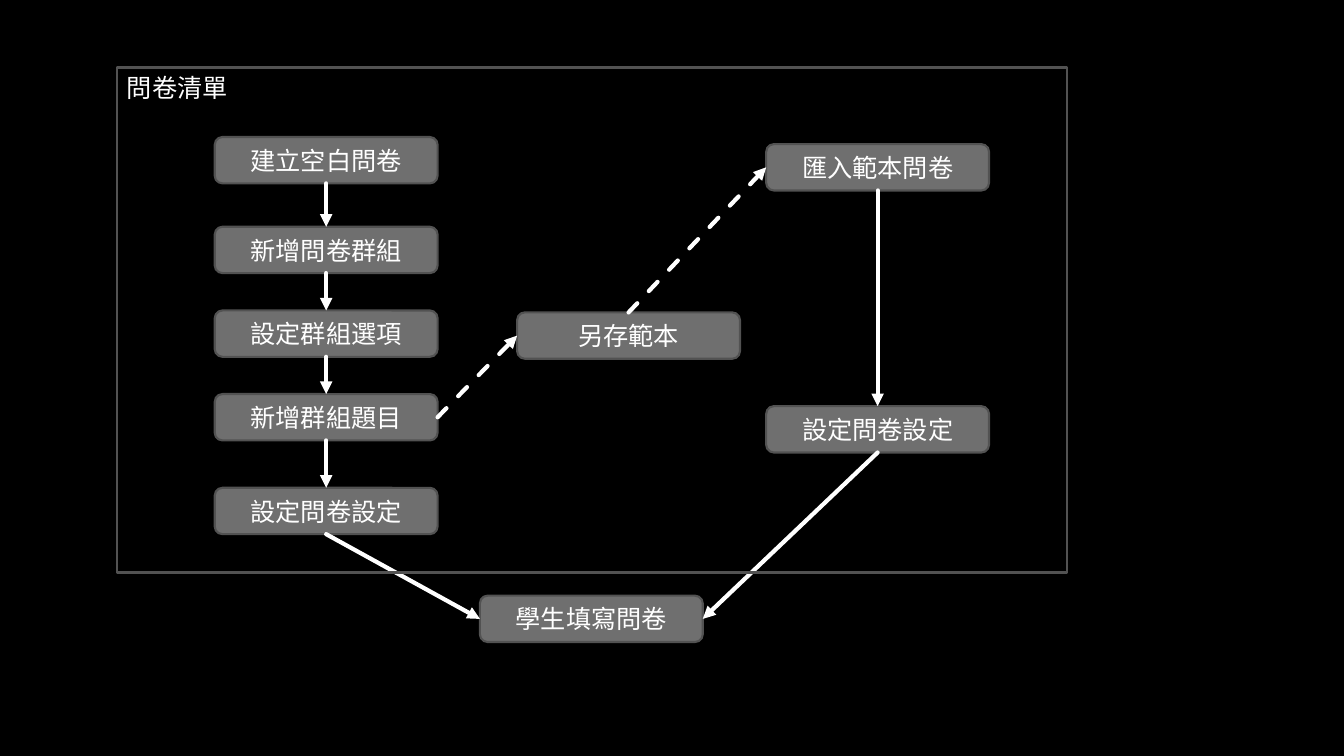
from lxml import etree
from pptx import Presentation, util as u
from pptx.dml.color import RGBColor
from pptx.enum import dml, shapes, text
from pptx.oxml.ns import qn

BLACK = RGBColor(0x00, 0x00, 0x00)
WHITE = RGBColor(0xFF, 0xFF, 0xFF)
GREY = RGBColor(0x6F, 0x6F, 0x6F)
DARK_GREY = RGBColor(0x52, 0x52, 0x52)

TOP, LEFT, BOTTOM, RIGHT = range(4)
GRID = 100  # columns and rows across the slide
STEP_WIDTH, STEP_HEIGHT = 16.58, 6.13

CREATE_COL, SUBMIT_COL, TEMPLATE_COL, IMPORT_COL = 15.98, 35.71, 38.48, 57.01
STEPS = {
    "create": ("建立空白問卷", CREATE_COL, 18.13),
    "group": ("新增問卷群組", CREATE_COL, 30),
    "options": ("設定群組選項", CREATE_COL, 41.07),
    "questions": ("新增群組題目", CREATE_COL, 52.13),
    "settings": ("設定問卷設定", CREATE_COL, 64.53),
    "template": ("另存範本", TEMPLATE_COL, 41.33),
    "import": ("匯入範本問卷", IMPORT_COL, 19.07),
    "import settings": ("設定問卷設定", IMPORT_COL, 53.73),
    "submit": ("學生填寫問卷", SUBMIT_COL, 78.8),
}
ARROWS = [
    ("create", BOTTOM, "group", TOP, False),
    ("group", BOTTOM, "options", TOP, False),
    ("options", BOTTOM, "questions", TOP, False),
    ("questions", BOTTOM, "settings", TOP, False),
    ("questions", RIGHT, "template", LEFT, True),
    ("template", TOP, "import", LEFT, True),
    ("import", BOTTOM, "import settings", TOP, False),
    ("settings", BOTTOM, "submit", LEFT, False),
    ("import settings", BOTTOM, "submit", RIGHT, False),
]


class FlowPage:
    font = "Quicksand"
    size = u.Pt(18)
    outline = u.Pt(1.5)
    arrow_width = u.Pt(3)

    def __init__(self, deck):
        self.deck = deck
        self.page = deck.slides.add_slide(deck.slide_layouts[6])
        background = self.page.background.fill
        background.solid()
        background.fore_color.rgb = BLACK

    def place(self, col, row, cols, rows):
        """Turn grid columns and rows into slide lengths."""
        width, height = self.deck.slide_width, self.deck.slide_height
        return [round(share * side / GRID) for share, side in
                ((col, width), (row, height), (cols, width), (rows, height))]

    def add_words(self, box, words, align):
        para = box.text_frame.paragraphs[0]
        para.alignment = align
        span = para.add_run()
        span.text = words
        span.font.name = self.font
        span.font.size = self.size
        span.font.color.rgb = WHITE

    def outlined(self, kind, *area):
        box = self.page.shapes.add_shape(kind, *self.place(*area))
        box.shadow.inherit = False
        box.line.color.rgb = DARK_GREY
        box.line.width = self.outline
        return box

    def step(self, words, col, row):
        box = self.outlined(shapes.MSO_SHAPE.ROUNDED_RECTANGLE, col, row, STEP_WIDTH, STEP_HEIGHT)
        box.fill.solid()
        box.fill.fore_color.rgb = GREY
        box.text_frame.vertical_anchor = text.MSO_ANCHOR.MIDDLE
        self.add_words(box, words, text.PP_ALIGN.CENTER)
        return box

    def frame(self, *area):
        self.outlined(shapes.MSO_SHAPE.RECTANGLE, *area).fill.background()

    def label(self, words, *area):
        box = self.page.shapes.add_textbox(*self.place(*area))
        box.text_frame.word_wrap = False
        box.text_frame.auto_size = text.MSO_AUTO_SIZE.SHAPE_TO_FIT_TEXT
        self.add_words(box, words, text.PP_ALIGN.LEFT)

    def arrow(self, start, start_side, end, end_side, dashed):
        link = self.page.shapes.add_connector(shapes.MSO_CONNECTOR.STRAIGHT, 0, 0, 0, 0)
        link.begin_connect(start, start_side)
        link.end_connect(end, end_side)
        link.line.color.rgb = WHITE
        link.line.width = self.arrow_width
        if dashed:
            link.line.dash_style = dml.MSO_LINE.DASH
        properties = link._element.spPr
        stroke = properties.find(qn("a:ln"))
        stroke.set("cap", "rnd")
        etree.SubElement(stroke, qn("a:tailEnd"), type="triangle")
        etree.SubElement(properties, qn("a:effectLst"))


def main():
    deck = Presentation()
    deck.slide_width, deck.slide_height = u.Inches(13.33), u.Inches(7.5)
    flow = FlowPage(deck)
    boxes = {name: flow.step(*step) for name, step in STEPS.items()}
    for start, start_side, end, end_side, dashed in ARROWS:
        flow.arrow(boxes[start], start_side, boxes[end], end_side, dashed)
    flow.frame(8.7, 8.93, 70.67, 66.8)
    flow.label("問卷清單", 8.7, 8.93, 9.08, 5.33)
    deck.save("out.pptx")


if __name__ == "__main__":
    main()
